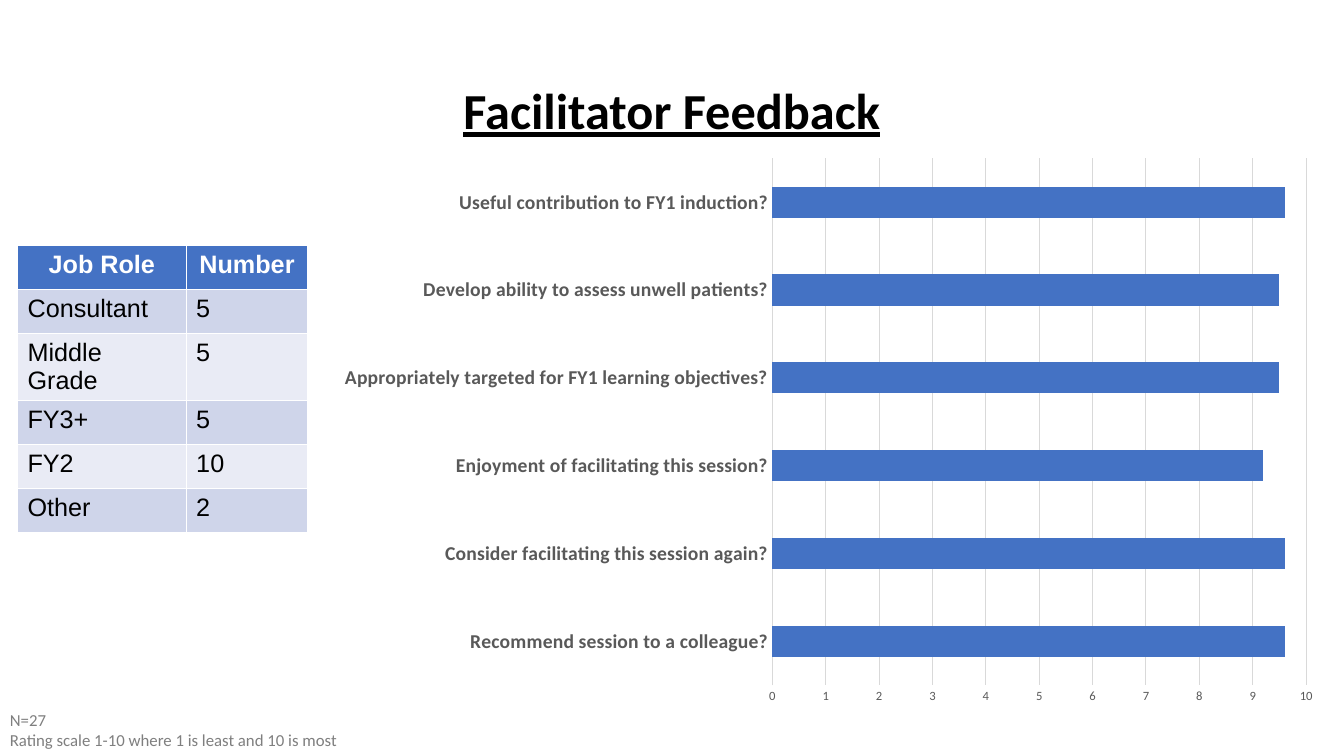
from pptx import Presentation
from pptx.chart.data import CategoryChartData
from pptx.dml.color import RGBColor
from pptx.enum.chart import XL_CHART_TYPE, XL_TICK_MARK
from pptx.enum.text import MSO_ANCHOR, PP_ALIGN
from pptx.util import Pt

COLORS = {
    "black": "000000",
    "white": "FFFFFF",
    "blue": "4472C4",
    "band_dark": "CFD5EA",
    "band_light": "E9EBF5",
    "grid": "D9D9D9",
    "axis_text": "595959",
    "note": "7F7F7F",
}
JOB_ROLES = [
    ("Job Role", "Number"),
    ("Consultant", "5"),
    ("Middle Grade", "5"),
    ("FY3+", "5"),
    ("FY2", "10"),
    ("Other", "2"),
]
RATINGS = [
    ("Recommend session to a colleague?", 9.6),
    ("Consider facilitating this session again?", 9.6),
    ("Enjoyment of facilitating this session?", 9.2),
    ("Appropriately targeted for FY1 learning objectives?", 9.5),
    ("Develop ability to assess unwell patients?", 9.5),
    ("Useful contribution to FY1 induction?", 9.6),
]
NOTES = ["N=27", "Rating scale 1-10 where 1 is least and 10 is most"]


def color(name):
    """Return the named colour."""
    return RGBColor.from_string(COLORS[name])


def style_font(font, size, color_name, bold=False, family="Calibri"):
    """Set the family, size, colour and weight of a font."""
    font.name = family
    font.size = Pt(size)
    font.bold = bold
    font.color.rgb = color(color_name)


def add_run(paragraph, text, *style):
    """Add a styled run to a paragraph and return it."""
    run = paragraph.add_run()
    run.text = text
    style_font(run.font, *style)
    return run


def fill_title(slide, text):
    """Place and format the title placeholder."""
    title = slide.shapes.title
    title.left, title.top, title.width, title.height = Pt(66), Pt(28.75), Pt(828), Pt(104.4)
    title.text_frame.vertical_anchor = MSO_ANCHOR.MIDDLE
    paragraph = title.text_frame.paragraphs[0]
    paragraph.alignment = PP_ALIGN.CENTER
    paragraph.line_spacing = 0.9
    run = add_run(paragraph, text, 36, "black", True)
    run.font.underline = True


def style_axis(axis, size, bold):
    """Set the labels of a chart axis and remove its tick marks."""
    axis.major_tick_mark = XL_TICK_MARK.NONE
    axis.minor_tick_mark = XL_TICK_MARK.NONE
    style_font(axis.tick_labels.font, size, "axis_text", bold)


def style_line(line):
    """Give a chart line the thin grid look."""
    line.color.rgb = color("grid")
    line.width = Pt(0.75)


def add_rating_chart(slide, ratings):
    """Add the bar chart of mean ratings."""
    data = CategoryChartData()
    data.categories = [question for question, _ in ratings]
    data.add_series("Series 1", [rating for _, rating in ratings])
    chart = slide.shapes.add_chart(
        XL_CHART_TYPE.BAR_CLUSTERED, Pt(232), Pt(105), Pt(720), Pt(406), data
    ).chart
    chart.has_legend = False
    chart.has_title = False
    style_font(chart.font, 10, "black")

    plot = chart.plots[0]
    plot.gap_width = 182
    plot.vary_by_categories = False
    bars = plot.series[0].format.fill
    bars.solid()
    bars.fore_color.rgb = color("blue")

    style_axis(chart.category_axis, 14, True)
    style_line(chart.category_axis.format.line)

    value_axis = chart.value_axis
    style_axis(value_axis, 9, False)
    value_axis.minimum_scale = 0
    value_axis.maximum_scale = 10
    value_axis.major_unit = 1
    value_axis.format.line.fill.background()
    value_axis.has_major_gridlines = True
    style_line(value_axis.major_gridlines.format.line)


def add_role_table(slide, rows):
    """Add the table of job roles with a header and banded rows."""
    row_height = Pt(31.55)
    table = slide.shapes.add_table(
        len(rows), 2, Pt(12.5), Pt(175.2), Pt(207.5), row_height * len(rows)
    ).table
    for column, width in zip(table.columns, (120.5, 87)):
        column.width = Pt(width)
    for row_index, values in enumerate(rows):
        table.rows[row_index].height = row_height
        header = row_index == 0
        band = "band_dark" if row_index % 2 else "band_light"
        for column_index, text in enumerate(values):
            cell = table.cell(row_index, column_index)
            cell.fill.solid()
            cell.fill.fore_color.rgb = color("blue" if header else band)
            paragraph = cell.text_frame.paragraphs[0]
            paragraph.alignment = PP_ALIGN.CENTER if header else PP_ALIGN.LEFT
            add_run(paragraph, text, 18, "white" if header else "black", header, "Arial")


def add_notes_box(slide, lines):
    """Add the small explanatory lines at the bottom left."""
    box = slide.shapes.add_textbox(Pt(0), Pt(503.5), Pt(440.5), Pt(36.5))
    frame = box.text_frame
    frame.word_wrap = True
    for index, text in enumerate(lines):
        paragraph = frame.add_paragraph() if index else frame.paragraphs[0]
        add_run(paragraph, text, 12, "note")


def main():
    """Build and save the feedback slide."""
    presentation = Presentation()
    presentation.slide_width, presentation.slide_height = Pt(960), Pt(540)
    slide = presentation.slides.add_slide(presentation.slide_layouts[5])
    fill_title(slide, "Facilitator Feedback")
    add_rating_chart(slide, RATINGS)
    add_role_table(slide, JOB_ROLES)
    add_notes_box(slide, NOTES)
    presentation.save("out.pptx")


if __name__ == "__main__":
    main()
